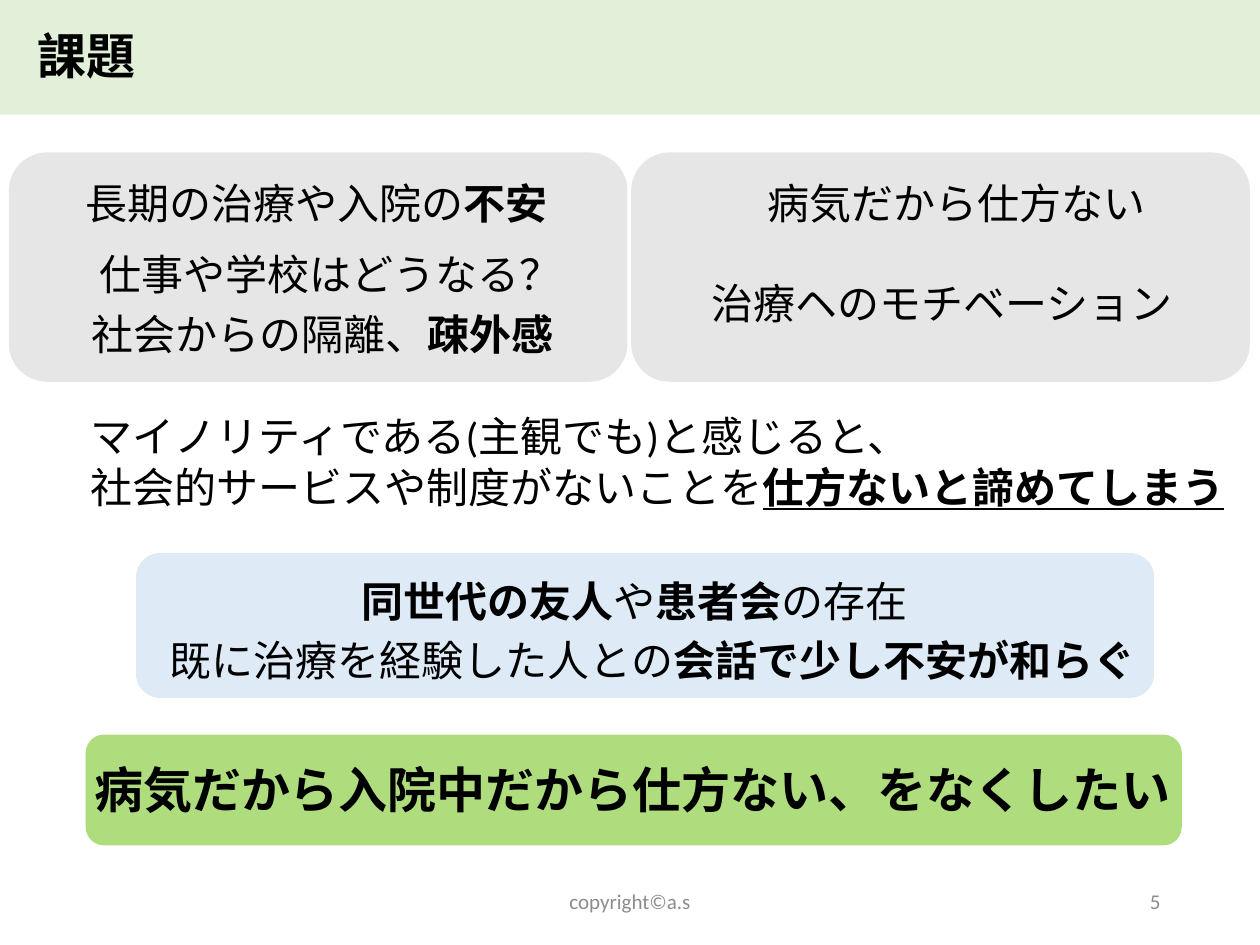
import pptx
import pptx.dml.color
import pptx.enum.shapes
import pptx.enum.text
import pptx.util

ALIGN = pptx.enum.text.PP_ALIGN
ANCHOR = pptx.enum.text.MSO_ANCHOR
color = pptx.dml.color.RGBColor.from_string

deck = pptx.Presentation()
deck.slide_width = pptx.util.Inches(10)
deck.slide_height = pptx.util.Inches(7.5)
page = deck.slides.add_slide(deck.slide_layouts[5])


def area(left, top, width, height):
    """Turn percentages of the slide into a position and size."""
    across, down = deck.slide_width / 100, deck.slide_height / 100
    return [round(n) for n in (left * across, top * down, width * across, height * down)]


def add_text(box, lines, size, ink="000000", align=ALIGN.LEFT, anchor=ANCHOR.TOP):
    """Write lines of (text, style) spans; style b is bold, u is underlined."""
    frame = box.text_frame
    frame.word_wrap = True
    frame.auto_size = pptx.enum.text.MSO_AUTO_SIZE.NONE
    frame.vertical_anchor = anchor
    for number, spans in enumerate(lines):
        para = frame.add_paragraph() if number else frame.paragraphs[0]
        para.alignment = align
        para.font.name = "Calibri"
        para.font.size = pptx.util.Pt(size)
        para.font.color.rgb = color(ink)
        for text, style in spans:
            span = para.add_run()
            span.text = text
            span.font.bold = "b" in style
            if "u" in style:
                span.font.underline = True


# Title band
title = page.shapes.title
title.left, title.top, title.width, title.height = area(0, 0, 100, 12.13)
title.fill.solid()
title.fill.fore_color.rgb = color("E2F0D9")
add_text(title, [[("課題", "b")]], 28)
title.text_frame.margin_left = pptx.util.Inches(0.3)
title.text_frame.margin_top = pptx.util.Inches(0.2)

# Rounded panels
panels = [
    ((0.7, 16.13, 49.1, 24.27), "E7E6E6"),
    ((50.1, 16.13, 49.1, 24.27), "E7E6E6"),
    ((10.8, 58.53, 80.8, 15.33), "DEEBF7"),
    ((6.8, 77.73, 87, 11.73), "AFDD7D"),
]
for place, fill in panels:
    panel = page.shapes.add_shape(
        pptx.enum.shapes.MSO_SHAPE.ROUNDED_RECTANGLE, *area(*place))
    panel.shadow.inherit = False
    panel.fill.solid()
    panel.fill.fore_color.rgb = color(fill)
    panel.line.fill.background()

# Statements: place, text size, lines
statements = [
    ((5.8, 18.13, 41.5, 6.67), 24, [[("長期の治療や入院の", ""), ("不安", "b")]]),
    ((6.9, 25.6, 38.9, 6.67), 24, [[("仕事や学校はどうなる？", "")]]),
    ((6.3, 32, 39.1, 6.67), 24, [[("社会からの隔離、", ""), ("疎外感", "b")]]),
    ((59.9, 18.13, 32.9, 6.67), 24, [[("病気だから仕方ない", "")]]),
    ((55.5, 28.67, 41.9, 6.67), 24, [[("治療ヘのモチベーション", "")]]),
    ((6.2, 42.8, 93.8, 12.13), 24, [
        [("マイノリティである(主観でも)と感じると、", "")],
        [("社会的サービスや制度がないことを", ""), ("仕方ないと諦めてしまう", "bu")],
    ]),
    ((27.7, 60.27, 45.7, 6.67), 24, [
        [("同世代の友人", "b"), ("や", ""), ("患者会", "b"), ("の存在", "")]]),
    ((12.5, 66.53, 79.6, 6.67), 24, [
        [("既に治療を経験した人との", ""), ("会話で少し不安が和らぐ", "b")]]),
    ((6.5, 79.73, 90, 7.6), 28, [
        [("病気だから入院中だから仕方ない、をなくしたい", "b")]]),
]
for place, size, lines in statements:
    add_text(page.shapes.add_textbox(*area(*place)), lines, size)

# Footer
footers = [
    ((33.1, 92.67, 33.8, 5.33), "copyright©a.s", ALIGN.CENTER),
    ((70.6, 92.67, 22.5, 5.33), "5", ALIGN.RIGHT),
]
for place, text, align in footers:
    add_text(page.shapes.add_textbox(*area(*place)), [[(text, "")]], 12,
             "8C8C8C", align, ANCHOR.MIDDLE)

deck.save("out.pptx")
